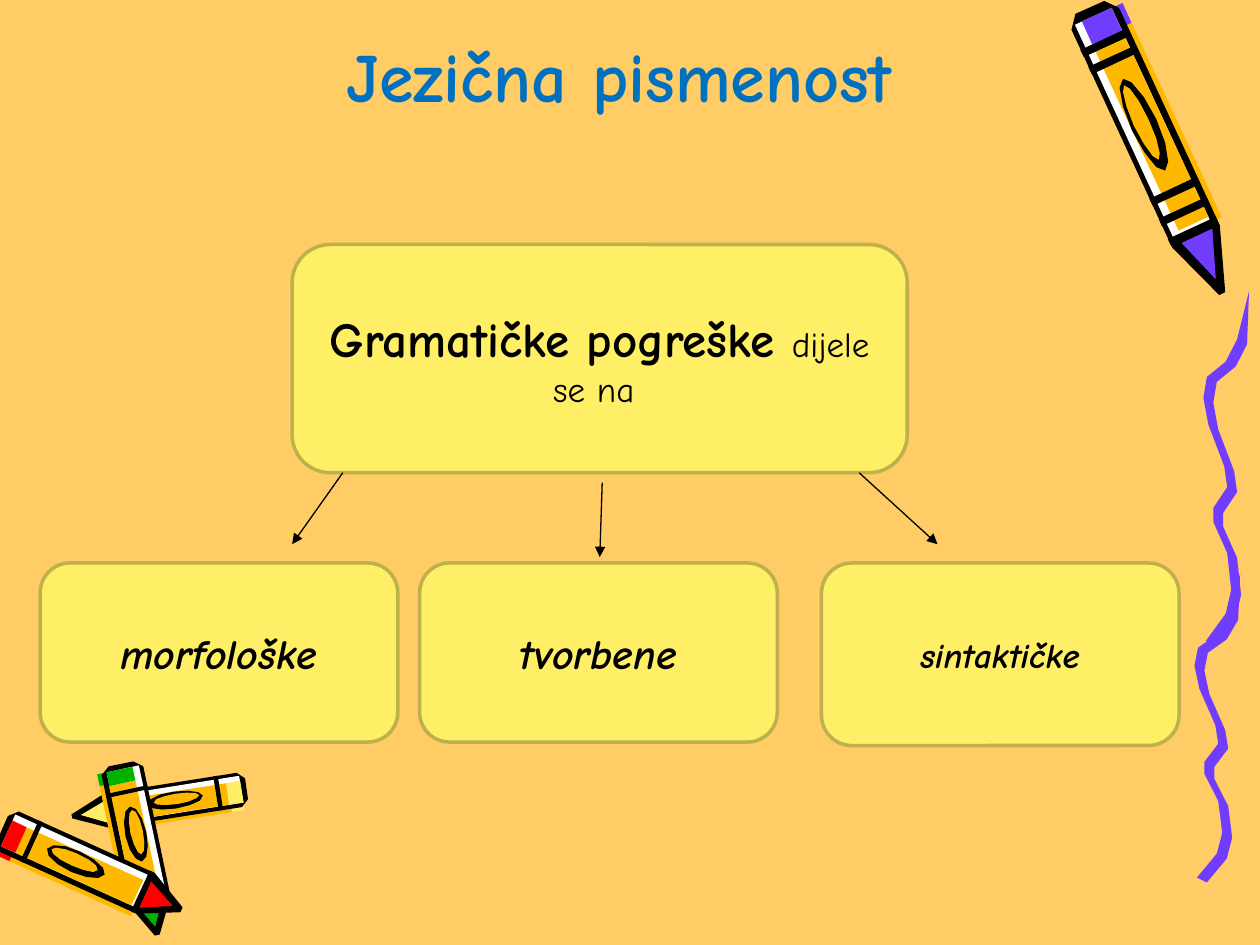
import math

import pptx
import pptx.util
import pptx.dml.color
import pptx.enum.shapes
import pptx.enum.text
import pptx.oxml.ns
import lxml.etree

Cm, Pt = pptx.util.Cm, pptx.util.Pt
RGB = pptx.dml.color.RGBColor
qn = pptx.oxml.ns.qn

SAND = RGB(0xFF, 0xCC, 0x66)
YELLOW = RGB(0xFF, 0xEF, 0x66)
OLIVE = RGB(0xBD, 0xB1, 0x4B)
BLUE = RGB(0x00, 0x70, 0xC0)
BLACK = RGB(0, 0, 0)
WHITE = RGB(0xFF, 0xFF, 0xFF)
PURPLE = RGB(0x70, 0x3D, 0xFF)
ORANGE = RGB(0xFF, 0xB8, 0x00)
RED = RGB(0xFF, 0, 0)
GREEN = RGB(0, 0xB2, 0)

# Centre line of one scribble wave, in cm from its top left corner
WAVE = [(0.9, 0), (0.76, 1.02), (0.53, 1.47), (0.15, 1.78), (0.08, 2.2),
        (0.18, 2.74), (0.5, 3.58), (0.56, 4), (0.28, 4.42), (0.28, 4.7),
        (0.56, 5.33), (0.64, 6.07), (0.53, 6.55), (0.13, 7.1)]


def strip(u1, u2, v1, v2):
    """Four corners of a piece of crayon: u runs along it, v across it."""
    return [(u1, v1), (u2, v1), (u2, v2), (u1, v2)]


def oval(u, v, ru, rv, steps=12):
    turns = [2 * math.pi * i / steps for i in range(steps)]
    return [(u + ru * math.cos(t), v + rv * math.sin(t)) for t in turns]


class SlideBuilder:
    font = "Comic Neue"

    def __init__(self, s):
        self.s = s

    def polygon(self, shapes, points, color):
        points = [(100 * x, 100 * y) for x, y in points]
        builder = shapes.build_freeform(*points[0], scale=Cm(0.01))
        builder.add_line_segments(points[1:], close=True)
        sp = builder.convert_to_shape()
        sp.shadow.inherit = False
        sp.fill.solid()
        sp.fill.fore_color.rgb = color
        sp.line.fill.background()

    def crayon(self, butt, tip, half_width, color, light, bands):
        """Draw a crayon from butt to tip; light is the side (1 or -1) that shines.

        u goes from 0 at the butt to 1 at the tip, v from -1 to 1 across.
        """
        dx, dy = tip[0] - butt[0], tip[1] - butt[1]
        length = math.hypot(dx, dy)
        across_x, across_y = (k * light * half_width / length for k in (dy, -dx))

        def place(u, v):
            return (butt[0] + u * dx + v * across_x,
                    butt[1] + u * dy + v * across_y)

        outline = [(0, -0.6), (0, 0.6), (0.04, 1), (0.8, 1), (1, 0.12),
                   (1, -0.12), (0.8, -1), (0.04, -1)]
        parts = [
            (strip(0.1, 0.78, -1.2, 0), ORANGE),     # colour outside the outline
            (strip(0.03, 0.1, -1.2, 0), color),
            (outline, BLACK),
            (strip(0.03, 0.78, -0.75, 0.8), WHITE),  # shine
            (strip(0.11, 0.76, -0.75, 0.5), ORANGE),
            (strip(0.03, 0.11, -0.75, 0.5), color),
            ([(0.8, -0.7), (0.8, 0.6), (0.95, 0)], color),
            (oval(0.41, 0, 0.16, 0.5), BLACK),       # ring on the label
            (oval(0.4, 0.06, 0.13, 0.3), ORANGE),
        ]
        parts += [(strip(u, u + 0.025, -1, 1), BLACK) for u in bands]

        group = self.s.shapes.add_group_shape()
        for points, fill in parts:
            self.polygon(group.shapes, [place(u, v) for u, v in points], fill)

    def wave(self, x, y, stretch, pen=0.1):
        """Draw a ribbon along WAVE that starts as a point and widens to the pen."""
        right, left = [], []
        for i, (cx, cy) in enumerate(WAVE):
            w = pen * min(i, 1)
            cx, cy = x + cx, y + stretch * cy
            right.append((cx + w, cy + w / 2))
            left.append((cx - w, cy - w / 2))
        self.polygon(self.s.shapes, right + left[:0:-1], PURPLE)

    def text(self, sp, runs, color=BLACK, italic=False):
        tf = sp.text_frame
        tf.word_wrap = True
        p = tf.paragraphs[0]
        p.alignment = pptx.enum.text.PP_ALIGN.CENTER
        for words, size, bold in runs:
            r = p.add_run()
            r.text = words
            r.font.name = self.font
            r.font.size = Pt(size)
            r.font.bold = bold
            r.font.italic = italic
            r.font.color.rgb = color

    def title(self, words, x, y, w, h):
        sp = self.s.shapes.add_textbox(Cm(x), Cm(y), Cm(w), Cm(h))
        self.text(sp, [(words, 40, True)], BLUE)
        sp.text_frame.paragraphs[0].space_before = Pt(8)

    def box(self, runs, x, y, w, h, italic=False):
        sp = self.s.shapes.add_shape(pptx.enum.shapes.MSO_SHAPE.ROUNDED_RECTANGLE,
                                     Cm(x), Cm(y), Cm(w), Cm(h))
        sp.shadow.inherit = False
        sp.fill.solid()
        sp.fill.fore_color.rgb = YELLOW
        sp.line.color.rgb = OLIVE
        sp.line.width = Pt(2)
        sp.text_frame.vertical_anchor = pptx.enum.text.MSO_ANCHOR.MIDDLE
        self.text(sp, runs, italic=italic)

    def arrow(self, x1, y1, x2, y2):
        c = self.s.shapes.add_connector(pptx.enum.shapes.MSO_CONNECTOR.STRAIGHT,
                                        Cm(x1), Cm(y1), Cm(x2), Cm(y2))
        c.line.color.rgb = BLACK
        c.line.width = Pt(0.75)
        ln = c._element.spPr.find(qn("a:ln"))
        lxml.etree.SubElement(ln, qn("a:tailEnd"), type="triangle")
        lxml.etree.SubElement(c._element.spPr, qn("a:effectLst"))


def main():
    prs = pptx.Presentation()
    prs.slide_width, prs.slide_height = Cm(25.4), Cm(19.05)
    s = prs.slides.add_slide(prs.slide_layouts[6])
    s.background.fill.solid()
    s.background.fill.fore_color.rgb = SAND
    b = SlideBuilder(s)

    # Three small crayons, back to front
    for butt, tip, half_width, color, light in (
            ((4.97, 15.9), (1.45, 16.46), 0.35, YELLOW, -1),
            ((2.44, 15.4), (3.17, 18.85), 0.43, GREEN, 1),
            ((0.05, 16.7), (3.66, 18.34), 0.45, RED, 1)):
        b.crayon(butt, tip, half_width, color, light, bands=(0.15, 0.77))

    # Scribble: the lower wave is a shorter repeat of the upper one
    b.wave(24.1, 11.56, 0.87)
    b.wave(24.28, 5.87, 1)

    # Big crayon
    b.crayon((21.97, 0.15), (24.64, 5.92), 0.53, PURPLE, -1,
             bands=(0.11, 0.17, 0.63, 0.7, 0.77))

    # Title and main concept
    b.title("Jezična pismenost", 0.89, 0.53, 23.19, 16.21)
    b.box([("Gramatičke pogreške ", 28, True), ("dijele se na ", 20, False)],
          5.89, 4.93, 12.4, 4.6)

    # Kinds of errors
    for words, size, x, h in (("sintaktičke", 20, 16.56, 3.68),
                              ("tvorbene", 24, 8.46, 3.61),
                              ("morfološke", 24, 0.81, 3.61)):
        b.box([(words, size, True)], x, 11.35, 7.21, h, italic=True)

    # Arrows to the kinds
    b.arrow(6.91, 9.53, 5.89, 10.97)
    b.arrow(12.14, 9.73, 12.09, 11.23)
    b.arrow(17.32, 9.53, 18.9, 10.97)

    prs.save("out.pptx")


if __name__ == "__main__":
    main()
